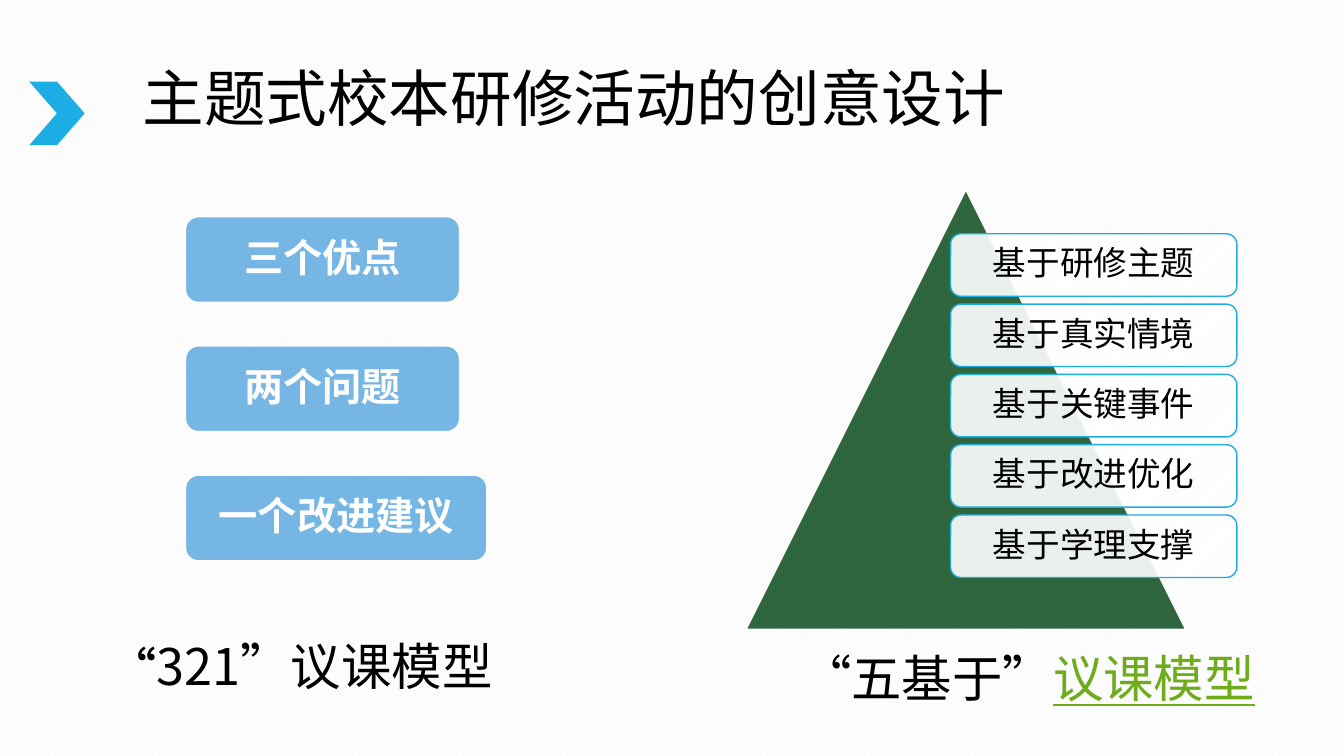
"""Build the lesson-discussion model slide and save it."""
from dataclasses import dataclass

from lxml.etree import SubElement
from pptx import Presentation
from pptx.dml.color import RGBColor
from pptx.enum.dml import MSO_PATTERN
from pptx.enum.lang import MSO_LANGUAGE_ID as LANG
from pptx.enum.shapes import MSO_SHAPE as SHAPE
from pptx.enum.text import MSO_ANCHOR, MSO_AUTO_SIZE, PP_ALIGN
from pptx.oxml.ns import qn
from pptx.util import Pt

FONT = "Noto Sans CJK SC"
BLACK = RGBColor(0x00, 0x00, 0x00)
WHITE = RGBColor(0xFF, 0xFF, 0xFF)
STRIPE = RGBColor(0xF2, 0xF2, 0xF2)
CYAN = RGBColor(0x1C, 0xAD, 0xE4)
SKY = RGBColor(0x75, 0xB6, 0xE5)
FOREST = RGBColor(0x2F, 0x66, 0x3E)
LIME = RGBColor(0x6E, 0xAC, 0x1C)


@dataclass(frozen=True)
class Box:
    left: float
    top: float
    width: float
    height: float

    def lengths(self) -> tuple:
        return Pt(self.left), Pt(self.top), Pt(self.width), Pt(self.height)


@dataclass(frozen=True)
class Span:
    text: str
    size: float
    color: RGBColor = BLACK
    bold: bool = False
    underline: bool = False


@dataclass(frozen=True)
class CardStyle:
    fill: RGBColor
    line: RGBColor
    radius: float
    inset: float
    opacity: int = 100


BASIS = CardStyle(WHITE, CYAN, 0.167, 7.2, 90)
STEP = CardStyle(SKY, WHITE, 0.15, 13.7)


def format_run(r, span: Span) -> None:
    r.font.name = FONT
    r.font.size = Pt(span.size)
    r.font.bold = span.bold
    r.font.color.rgb = span.color
    r.font.language_id = LANG.SIMPLIFIED_CHINESE
    if span.underline:
        r.font.underline = True
    SubElement(r.font._element, qn("a:ea")).set("typeface", FONT)


def center_text(tf, span: Span) -> None:
    tf.word_wrap = True
    tf.vertical_anchor = MSO_ANCHOR.MIDDLE
    tf.text = span.text
    p = tf.paragraphs[0]
    p.alignment = PP_ALIGN.CENTER
    p.line_spacing = 0.9
    format_run(p.runs[0], span)


def add_figure(s, kind: SHAPE, box: Box, fill: RGBColor, line: RGBColor | None = None):
    sp = s.shapes.add_shape(kind, *box.lengths())
    sp.shadow.inherit = False
    sp.fill.solid()
    sp.fill.fore_color.rgb = fill
    if line is None:
        sp.line.fill.background()
    else:
        sp.line.color.rgb = line
        sp.line.width = Pt(1)
    return sp


def add_card(s, box: Box, span: Span, style: CardStyle) -> None:
    sp = add_figure(s, SHAPE.ROUNDED_RECTANGLE, box, style.fill, style.line)
    sp.adjustments[0] = style.radius
    if style.opacity < 100:
        color = sp.element.spPr.find(qn("a:solidFill"))[0]
        SubElement(color, qn("a:alpha")).set("val", str(style.opacity * 1000))
    tf = sp.text_frame
    tf.margin_left = tf.margin_right = Pt(style.inset)
    tf.margin_top = tf.margin_bottom = Pt(style.inset)
    center_text(tf, span)


def add_caption(s, box: Box, spans: list[Span]) -> None:
    tf = s.shapes.add_textbox(*box.lengths()).text_frame
    tf.word_wrap = True
    tf.auto_size = MSO_AUTO_SIZE.SHAPE_TO_FIT_TEXT
    p = tf.paragraphs[0]
    for span in spans:
        r = p.add_run()
        r.text = span.text
        format_run(r, span)


def main() -> None:
    prs = Presentation()
    prs.slide_width, prs.slide_height = Pt(960), Pt(540)
    s = prs.slides.add_slide(prs.slide_layouts[6])
    bg = s.background.fill
    bg.patterned()
    bg.pattern = MSO_PATTERN.LIGHT_UPWARD_DIAGONAL
    bg.fore_color.rgb = STRIPE
    bg.back_color.rgb = WHITE

    add_figure(s, SHAPE.CHEVRON, Box(20.9, 58.3, 39.6, 45.4), CYAN)
    title = s.shapes.add_textbox(*Box(81.4, 46.8, 657.4, 51.1).lengths())
    center_text(title.text_frame, Span("主题式校本研修活动的创意设计", 44))

    add_figure(s, SHAPE.ISOSCELES_TRIANGLE, Box(533, 135.6, 313.9, 313.9), FOREST, WHITE)
    bases = ["研修主题", "真实情境", "关键事件", "改进优化", "学理支撑"]
    for i, basis in enumerate(bases):
        box = Box(679, 167 + 50.22 * i, 204.5, 44.6)
        add_card(s, box, Span("基于" + basis, 24), BASIS)
    add_caption(s, Box(565.2, 458.6, 350.6, 51.1), [
        Span("“五基于”", 36),
        Span("议课模型", 36, LIME, underline=True),
    ])

    steps = [("三个优点", 195.8), ("两个问题", 195.8), ("一个改进建议", 215.3)]
    for i, (step, width) in enumerate(steps):
        box = Box(132.5, 154.8 + 92.3 * i, width, 61.2)
        add_card(s, box, Span(step, 28, WHITE, bold=True), STEP)
    add_caption(s, Box(72.7, 450, 350.6, 51.1), [
        Span("“", 32, bold=True),
        Span("321”议课模型", 36),
    ])
    prs.save("out.pptx")


if __name__ == "__main__":
    main()
